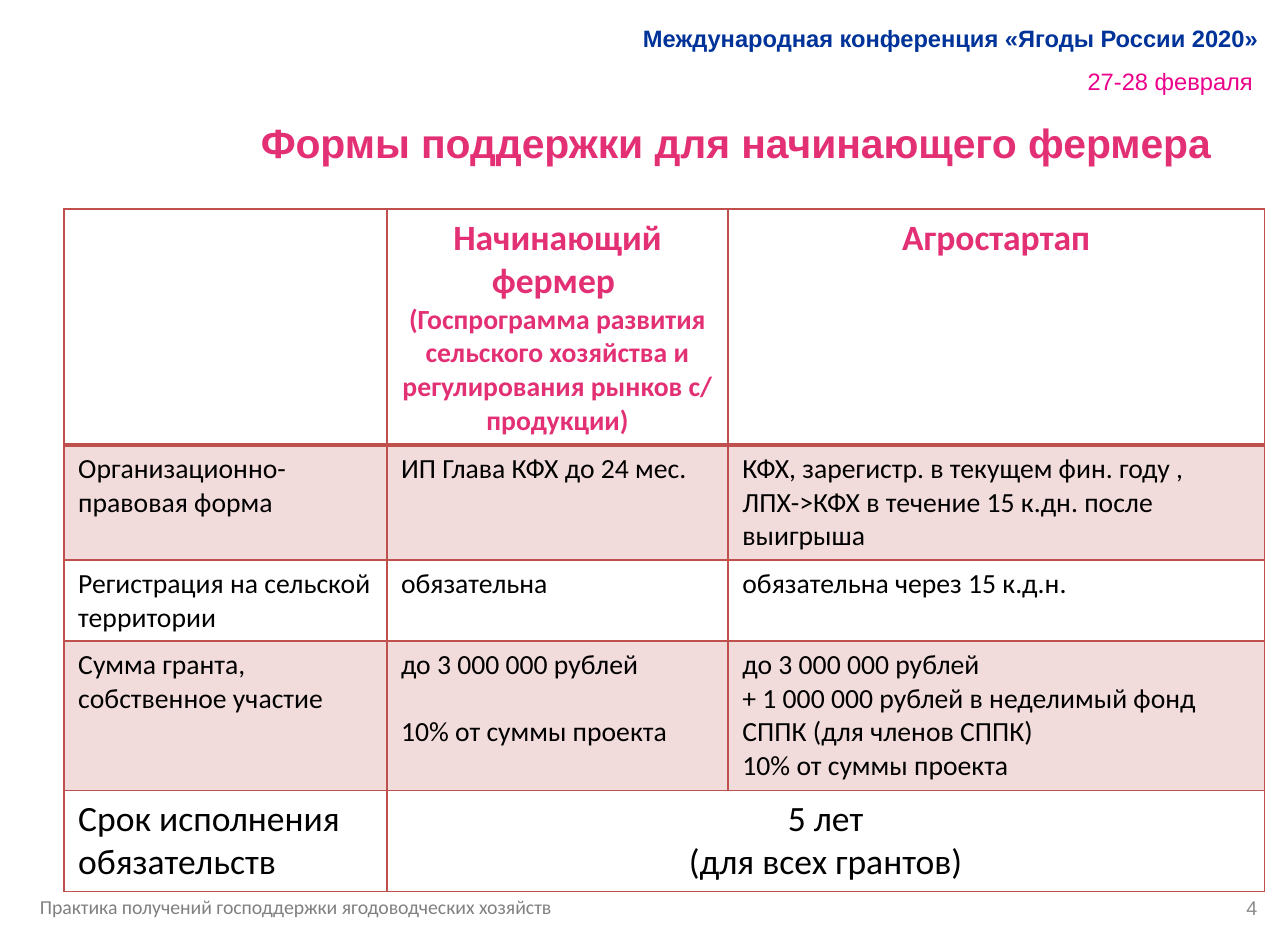
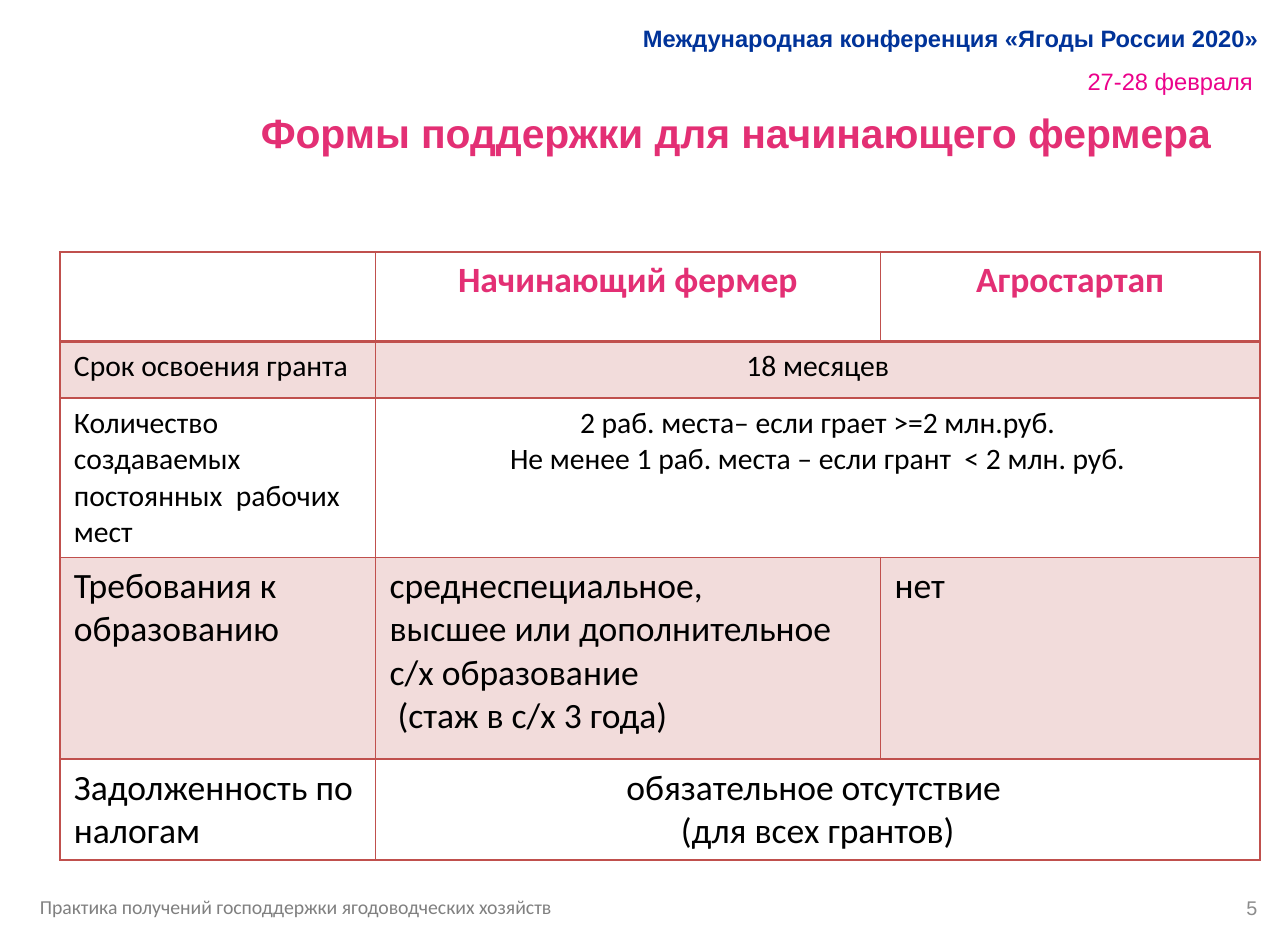
"""Builds two slides comparing support for beginning farmers."""
from lxml.etree import SubElement
from pptx import Presentation
from pptx.dml.color import RGBColor
from pptx.enum.text import MSO_ANCHOR, MSO_AUTO_SIZE, PP_ALIGN
from pptx.oxml.ns import qn
from pptx.util import Inches, Pt

PINK = RGBColor(0xE3, 0x2F, 0x74)
MAGENTA = RGBColor(0xEB, 0x02, 0x8B)
NAVY = RGBColor(0x00, 0x33, 0x99)
GREY = RGBColor(0x80, 0x80, 0x80)
NUMBER_GREY = RGBColor(0x8C, 0x8C, 0x8C)
BLACK = RGBColor(0x00, 0x00, 0x00)
BRICK = RGBColor(0xC0, 0x50, 0x4D)

TITLE = "Формы поддержки для начинающего фермера"
CONFERENCE = "Международная конференция «Ягоды России 2020»"
DATES = "27-28 февраля"
TOPIC = "Практика получений господдержки ягодоводческих хозяйств"

PAGES = [
    {
        "number": "4", "title_top": 0.78, "table_at": (0.45, 1.47),
        "widths": [2.27, 2.4, 3.77], "spaced_cell": (3, 1),
        "rows": [
            (1.66, 18, ["", "Начинающий фермер \n(Госпрограмма развития сельского хозяйства "
                        "и регулирования рынков с/ продукции)", "Агростартап"]),
            (0.81, 14, ["Организационно-правовая форма", "ИП Глава КФХ до 24 мес.",
                        "КФХ, зарегистр. в текущем фин. году ,\n"
                        "ЛПХ->КФХ в течение 15 к.дн. после выигрыша"]),
            (0.57, 14, ["Регистрация на сельской территории", "обязательна",
                        "обязательна через 15 к.д.н."]),
            (1.05, 14, ["Сумма гранта,\nсобственное участие",
                        "до 3 000 000 рублей\n10% от суммы проекта",
                        "до 3 000 000 рублей\n+ 1 000 000 рублей в неделимый фонд "
                        "СППК (для членов СППК)\n10% от суммы проекта"]),
            (0.71, 18, ["Срок исполнения обязательств", "5 лет\n(для всех грантов)"]),
        ],
    },
    {
        "number": "5", "title_top": 0.71, "table_at": (0.42, 1.77),
        "widths": [2.22, 3.55, 2.67], "spaced_cell": None,
        "rows": [
            (0.63, 18, ["", "Начинающий фермер", "Агростартап"]),
            (0.4, 15, ["Срок освоения гранта", "18 месяцев"]),
            (1.12, 15, ["Количество создаваемых постоянных  рабочих мест",
                        "2 раб. места– если грает >=2 млн.руб.\n"
                        "Не менее 1 раб. места – если грант  < 2 млн. руб."]),
            (1.42, 18, ["Требования к образованию",
                        "среднеспециальное,\nвысшее или дополнительное с/х образование\n"
                        " (стаж в с/х 3 года)", "нет"]),
            (0.71, 18, ["Задолженность по налогам",
                        "обязательное отсутствие \n(для всех грантов)"]),
        ],
    },
]


def style_text(paragraph, font_name, size, color, bold=False, align=PP_ALIGN.LEFT):
    paragraph.alignment = align
    paragraph.font.name = font_name
    paragraph.font.size = Pt(size)
    paragraph.font.bold = bold
    paragraph.font.color.rgb = color


def style_cell(cell, is_banded, top_width, bottom_width):
    properties = cell._tc.get_or_add_tcPr()
    for side, width in (("L", 1), ("R", 1), ("T", top_width), ("B", bottom_width)):
        line = SubElement(properties, qn(f"a:ln{side}"), w=str(Pt(width)))
        SubElement(SubElement(line, qn("a:solidFill")), qn("a:srgbClr"), val=str(BRICK))
    if is_banded:
        cell.fill.solid()
        cell.fill.fore_color.rgb = BRICK
        tint = properties.find(qn("a:solidFill")).find(qn("a:srgbClr"))
        SubElement(tint, qn("a:alpha"), val="20000")
    else:
        cell.fill.background()


prs = Presentation()
prs.slide_width = Inches(652 / 72)
prs.slide_height = Inches(482 / 72)
prs.element.sldSz.attrib.pop("type", None)

for page in PAGES:
    slide = prs.slides.add_slide(prs.slide_layouts[5])

    title = slide.shapes.title
    title.left, title.top = Inches(1.46), Inches(page["title_top"])
    title.width, title.height = Inches(7.43), Inches(0.78)
    title.text_frame.text = TITLE
    title.text_frame.auto_size = MSO_AUTO_SIZE.NONE
    title.text_frame.vertical_anchor = MSO_ANCHOR.TOP
    style_text(title.text_frame.paragraphs[0], "Arial", 20.7, PINK, True, PP_ALIGN.CENTER)

    for text, box, anchor, spacing, style in (
        (DATES, (7.28, 0.35, 1.61, 0.37), MSO_ANCHOR.TOP, Pt(20.4),
         ("Arial", 12, MAGENTA, False, PP_ALIGN.RIGHT)),
        (CONFERENCE, (4.23, 0.07, 4.7, 0.39), MSO_ANCHOR.MIDDLE, None,
         ("Arial", 12, NAVY, True, PP_ALIGN.RIGHT)),
        (page["number"], (6.81, 6.2, 2.11, 0.36), MSO_ANCHOR.MIDDLE, None,
         ("Arial", 10, NUMBER_GREY, False, PP_ALIGN.RIGHT)),
        (TOPIC, (0.2, 6.25, 4.49, 0.25), MSO_ANCHOR.TOP, Pt(12.2),
         ("Calibri", 10, GREY)),
    ):
        frame = slide.shapes.add_textbox(*map(Inches, box)).text_frame
        frame.word_wrap = True
        frame.vertical_anchor = anchor
        frame.margin_left = frame.margin_right = Inches(0.08)
        frame.margin_top = frame.margin_bottom = Inches(0.04)
        frame.text = text
        frame.paragraphs[0].line_spacing = spacing
        style_text(frame.paragraphs[0], *style)

    rows, widths = page["rows"], page["widths"]
    left, top = page["table_at"]
    table = slide.shapes.add_table(
        len(rows), len(widths), Inches(left), Inches(top),
        Inches(sum(widths)), Inches(sum(height for height, _, _ in rows)),
    ).table
    table.first_row = table.horz_banding = False
    for column, width in zip(table.columns, widths):
        column.width = Inches(width)

    for r, (height, size, texts) in enumerate(rows):
        table.rows[r].height = Inches(height)
        is_header = r == 0
        is_merged = len(texts) < len(widths)
        for c in range(len(widths)):
            style_cell(table.cell(r, c), r % 2 == 1,
                       2 if r == 1 else 1, 2 if is_header else 1)
        if is_merged:
            table.cell(r, 1).merge(table.cell(r, 2))
        for c, text in enumerate(texts):
            frame = table.cell(r, c).text_frame
            frame.text = text
            centred = c > 0 and (is_header or is_merged)
            for i, paragraph in enumerate(frame.paragraphs):
                style_text(paragraph, "Calibri", 14 if is_header and i else size,
                           PINK if is_header else BLACK, is_header,
                           PP_ALIGN.CENTER if centred else PP_ALIGN.LEFT)
            if (r, c) == page["spaced_cell"]:
                frame.paragraphs[-1].space_before = Pt(17)

prs.save("out.pptx")
